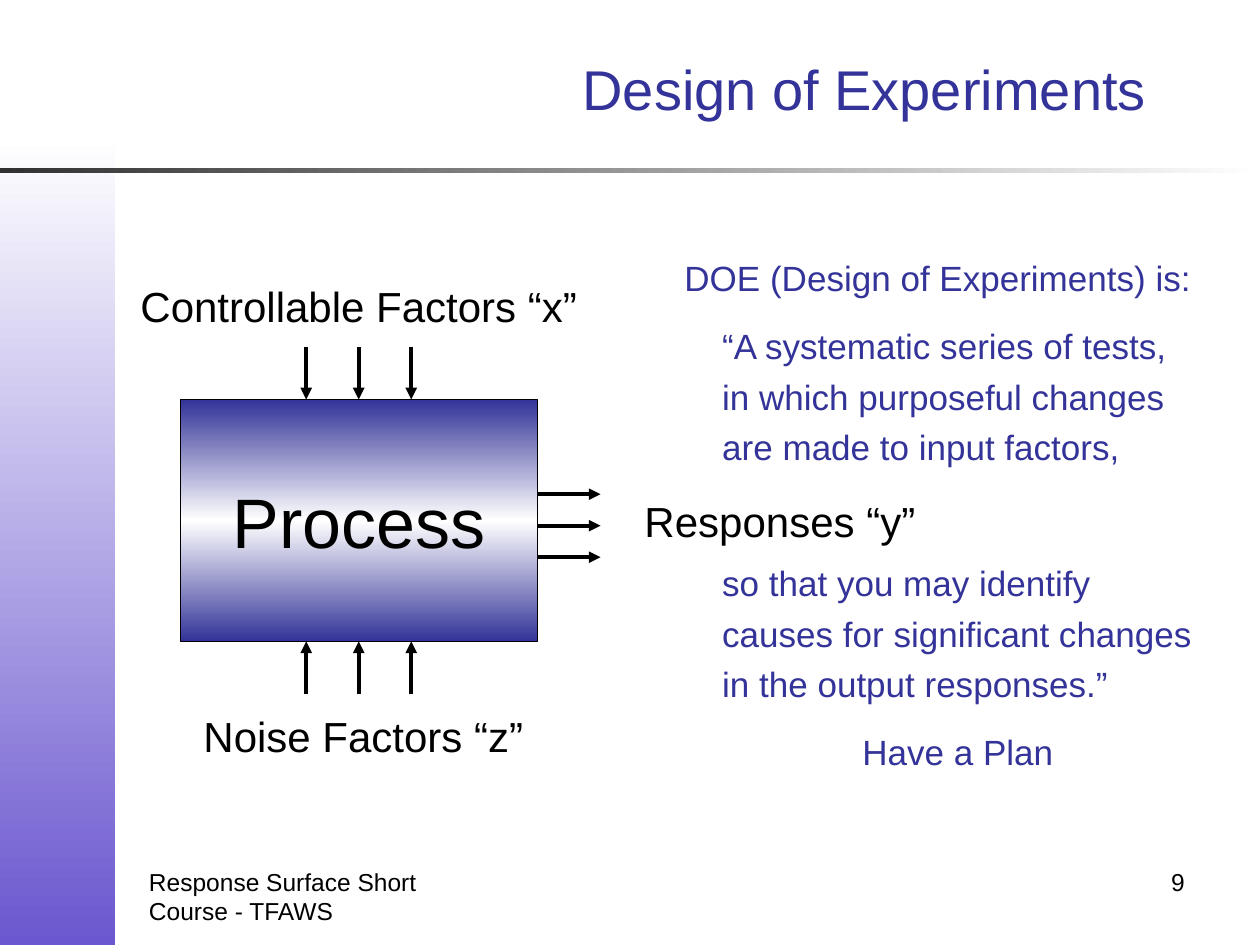
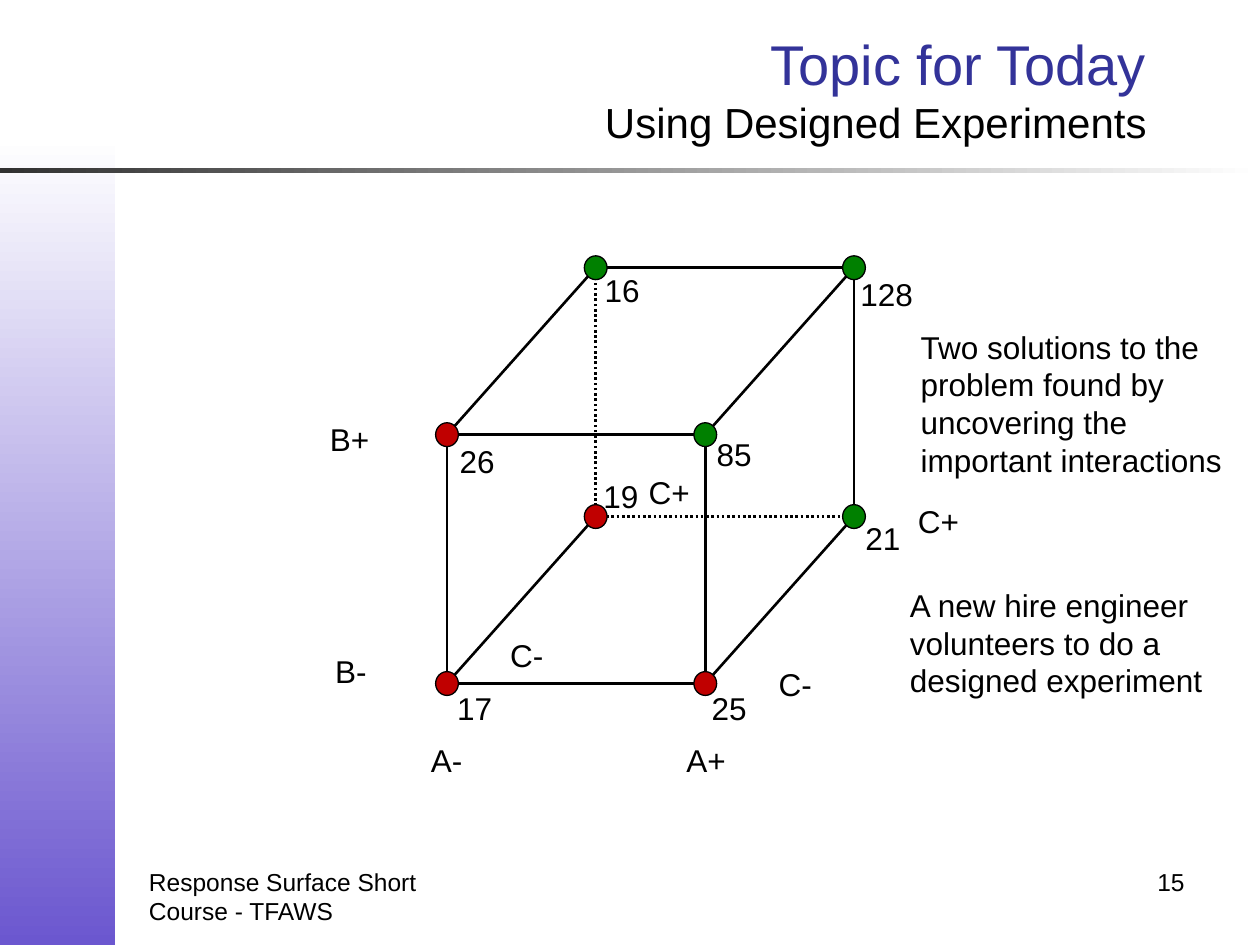
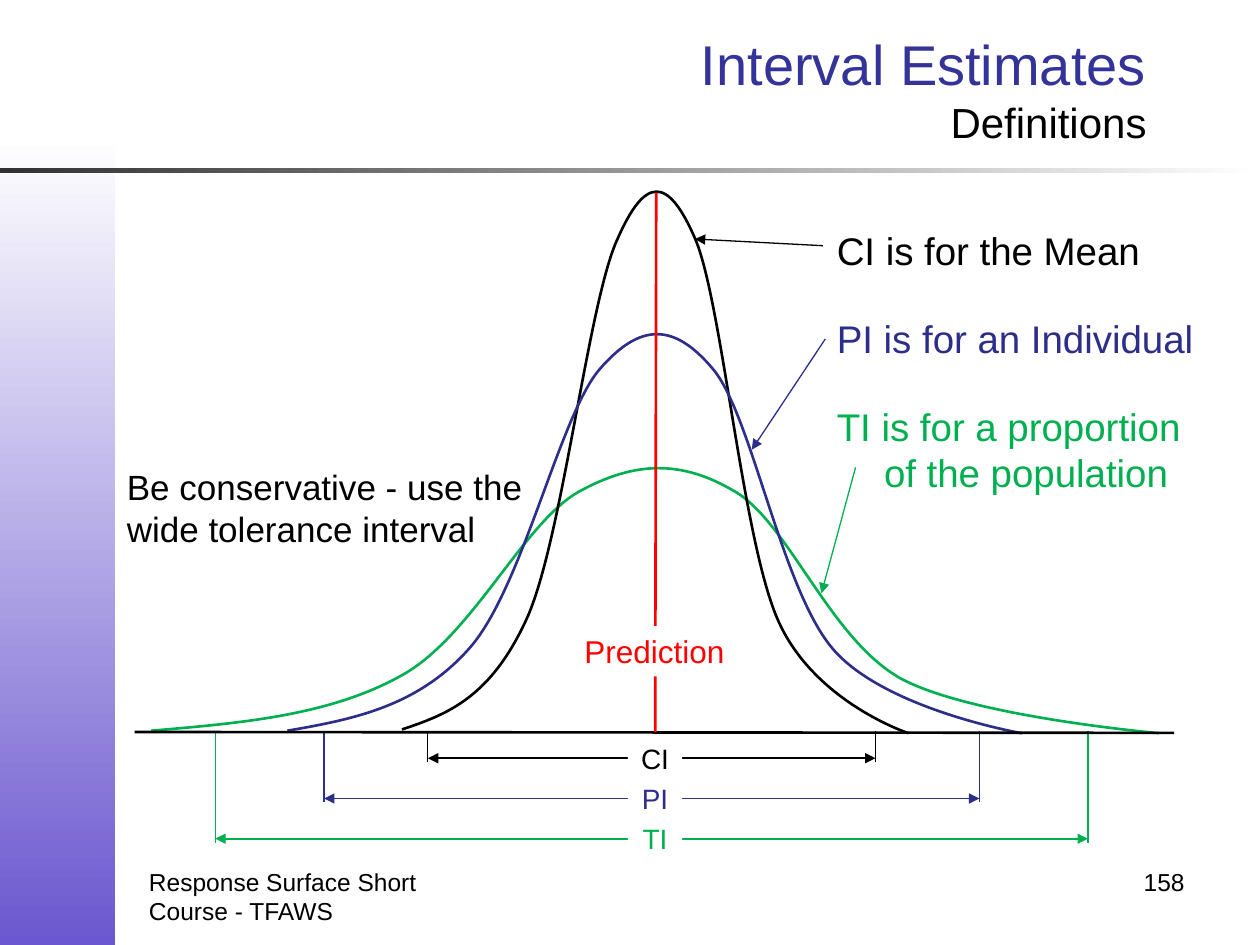
from copy import deepcopy
from itertools import combinations, product

from lxml import etree
from pptx import Presentation
from pptx.dml.color import RGBColor
from pptx.enum.dml import MSO_LINE
from pptx.enum.shapes import MSO_CONNECTOR, MSO_SHAPE
from pptx.enum.text import MSO_ANCHOR, MSO_AUTO_SIZE, PP_ALIGN
from pptx.oxml.ns import qn
from pptx.util import Pt

LEFT, CENTER, RIGHT, JUSTIFY = PP_ALIGN.LEFT, PP_ALIGN.CENTER, PP_ALIGN.RIGHT, PP_ALIGN.JUSTIFY
MIDDLE = MSO_ANCHOR.MIDDLE
NO_AUTOFIT = MSO_AUTO_SIZE.NONE
DOTTED = MSO_LINE.ROUND_DOT
STRAIGHT = MSO_CONNECTOR.STRAIGHT
RECT, OVAL = MSO_SHAPE.RECTANGLE, MSO_SHAPE.OVAL


class Theme:
    font = "Arial"
    white = RGBColor.from_string("FFFFFF")
    black = RGBColor.from_string("000000")
    charcoal = RGBColor.from_string("313131")
    indigo = RGBColor.from_string("333399")
    violet = RGBColor.from_string("6B57CF")
    navy = RGBColor.from_string("2D2D8A")
    green = RGBColor.from_string("00B050")
    red = RGBColor.from_string("FF0000")
    dot_green = RGBColor.from_string("008000")
    dot_red = RGBColor.from_string("C00000")
    process = 40
    title = 32
    heading = 24
    listing = 22
    body = 20
    label = 18
    interval = 16
    footer = 14


def add_text(slide, text, left, top, width, height, size, color=Theme.black,
             align=LEFT, wrap=False, fill=None):
    """Add a text box with one paragraph for each line of text."""
    sp = slide.shapes.add_textbox(Pt(left), Pt(top), Pt(width), Pt(height))
    if fill is not None:
        sp.fill.solid()
        sp.fill.fore_color.rgb = fill
    tf = sp.text_frame
    tf.word_wrap = wrap
    tf.text = text
    for p in tf.paragraphs:
        p.alignment = align
        p.font.name = Theme.font
        p.font.size = Pt(size)
        p.font.color.rgb = color
    return sp


def add_line(slide, start, end, color=Theme.black, width=1.5, arrows=(), dash=None):
    """Add a straight line; arrows lists headEnd (start) and tailEnd (end)."""
    line = slide.shapes.add_connector(STRAIGHT, *(Pt(v) for v in (*start, *end)))
    line.line.color.rgb = color
    line.line.width = Pt(width)
    if dash is not None:
        line.line.dash_style = dash
    props = line.element.spPr
    for arrow in arrows:
        etree.SubElement(props.find(qn("a:ln")), qn("a:" + arrow), type="triangle")
    etree.SubElement(props, qn("a:effectLst"))
    return line


prs = Presentation()
prs.slide_width, prs.slide_height = Pt(720), Pt(540)
layout = prs.slide_layouts[5]

# Titles and footers
slides = []
for number, title, subtitle in (
    (9, "Design of Experiments", None),
    (15, "Topic for Today", "Using Designed Experiments"),
    (158, "Interval Estimates", "Definitions"),
):
    s = prs.slides.add_slide(layout)
    slides.append(s)
    sp = s.shapes.title
    sp.left, sp.top, sp.width, sp.height = Pt(144), Pt(7.2), Pt(518.4), Pt(86.4)
    tf = sp.text_frame
    tf.auto_size = NO_AUTOFIT
    tf.vertical_anchor = MIDDLE
    p = tf.paragraphs[0]
    p.alignment = RIGHT
    p.font.name = Theme.font
    for text, size, color in ((title, Theme.title, Theme.indigo),
                              (subtitle, Theme.heading, Theme.black)):
        if text is None:
            continue
        if p.runs:
            p.add_line_break()
        r = p.add_run()
        r.text = text
        r.font.size = Pt(size)
        r.font.color.rgb = color
    add_text(s, "Response Surface Short Course - TFAWS", 78, 491.7, 168, 37.5,
             Theme.footer, wrap=True)
    add_text(s, str(number), 516, 491.7, 168, 37.5, Theme.footer, align=RIGHT, wrap=True)

doe, cube, intervals = slides

# Side band and title rule, shared through the layout
for shape_id, box, angle, colors in (
    (101, (0, 77.8, 65.9, 462.2), 270, (Theme.white, Theme.violet)),
    (102, (0, 96, 720, 2.9), 0, (Theme.charcoal, Theme.white)),
):
    sp = doe.shapes.add_shape(RECT, *(Pt(v) for v in box))
    sp.shadow.inherit = False
    sp.line.fill.background()
    sp.fill.gradient()
    sp.fill.gradient_angle = angle
    for stop, color in zip(sp.fill.gradient_stops, colors):
        stop.color.rgb = color
    sp.element.nvSpPr.cNvPr.id = shape_id
    layout.shapes.element.insert(shape_id - 99, sp.element)

# Design of Experiments: process diagram
left, top, width, height = 103, 228.3, 204, 138.2
process = doe.shapes.add_shape(RECT, Pt(left), Pt(top), Pt(width), Pt(height))
process.shadow.inherit = False
process.line.color.rgb = Theme.black
process.line.width = Pt(0.75)
process.fill.gradient()
process.fill.gradient_angle = 270
stops = process.element.find(".//" + qn("a:gsLst"))
middle_stop = deepcopy(stops[0])
middle_stop.set("pos", "50000")
stops.insert(1, middle_stop)
for stop, color in zip(process.fill.gradient_stops,
                       (Theme.indigo, Theme.white, Theme.indigo)):
    stop.color.rgb = color
tf = process.text_frame
tf.word_wrap = False
tf.vertical_anchor = MIDDLE
tf.text = "Process"
p = tf.paragraphs[0]
p.alignment = CENTER
p.font.name = Theme.font
p.font.size = Pt(Theme.process)
p.font.color.rgb = Theme.black

for step in (-1, 0, 1):
    x = left + width / 2 + 30 * step
    for outer, edge, site in ((198.5, top, 0), (396.6, top + height, 2)):
        arrow = add_line(doe, (x, outer), (x, edge), width=2.25, arrows=["tailEnd"])
        if step == 0:
            arrow.end_connect(process, site)
    y = 300.4 + 18 * step
    add_line(doe, (left + width, y), (343.2, y), width=2.25, arrows=["tailEnd"])

for text, x, y, w in (
    ("Noise Factors “z”", 109.2, 402.5, 197.3),
    ("Controllable Factors “x”", 73.2, 156.5, 264.2),
    ("Responses “y”", 361.2, 279.5, 169.2),
):
    add_text(doe, text, x, y, w, 36, Theme.heading)

definition = add_text(
    doe,
    "DOE (Design of Experiments) is:\n"
    "“A systematic series of tests, in which purposeful changes are made to input factors,\n"
    "so that you may identify causes for significant changes in the output responses.”\n"
    "Have a Plan",
    384, 138.4, 305.1, 303.1, Theme.body, Theme.indigo, wrap=True)
paragraphs = definition.text_frame.paragraphs
for p, align, gap in zip(paragraphs, (JUSTIFY, LEFT, LEFT, CENTER), (0, 10, 49, 10)):
    p.alignment = align
    p.line_spacing = 1.2
    p.space_before = Pt(gap)
    if p is not paragraphs[0]:
        p._p.get_or_add_pPr().set("marL", str(Pt(21.6)))

# Topic for Today: cube of factors A, B and C, each low (0) or high (1)
corners = {
    (a, b, c): (255.4 + 147.6 * a + 85 * c, 390.6 - 142.2 * b - 95.4 * c)
    for a, b, c in product((0, 1), repeat=3)
}
hidden = (0, 0, 1)
for one, two in combinations(corners, 2):
    if sum(m != n for m, n in zip(one, two)) == 1:
        along_c = one[2] != two[2]
        dotted = hidden in (one, two) and not along_c
        add_line(cube, corners[one], corners[two], dash=DOTTED if dotted else None)

for corner, value, color, x, y in (
    ((0, 0, 0), "17", Theme.dot_red, 254.2, 390.2),
    ((1, 0, 0), "25", Theme.dot_red, 399.6, 390.2),
    ((0, 1, 0), "26", Theme.dot_red, 255.6, 249.1),
    ((0, 0, 1), "19", Theme.dot_red, 337.7, 269.3),
    ((1, 1, 0), "85", Theme.dot_green, 402.5, 245.2),
    ((1, 0, 1), "21", Theme.dot_green, 487.4, 293),
    ((0, 1, 1), "16", Theme.dot_green, 338.4, 151.2),
    ((1, 1, 1), "128", Theme.dot_green, 484.6, 153.8),
):
    center_x, center_y = corners[corner]
    dot = cube.shapes.add_shape(OVAL, Pt(center_x - 6.5), Pt(center_y - 6.8),
                                Pt(13), Pt(13.6))
    dot.shadow.inherit = False
    dot.fill.solid()
    dot.fill.fore_color.rgb = color
    dot.line.color.rgb = Theme.black
    dot.line.width = Pt(0.75)
    add_text(cube, value, x, y, 14.6 + 10.05 * len(value), 28.8, Theme.label)

for text, x, y in (
    ("A-", 239.2, 419.8), ("A+", 385.2, 419.8),
    ("B-", 184.4, 368.8), ("B+", 181.4, 236.2),
    ("C-", 284.4, 360), ("C+", 363.6, 266.9),
    ("C-", 437.8, 376.6), ("C+", 517.5, 283.5),
):
    add_text(cube, text, x, y, 38.5 if "+" in text else 34, 28.8, Theme.label)

add_text(cube, "Two solutions to the problem found by uncovering the important interactions",
         519, 183.6, 191.5, 94.3, Theme.label, wrap=True)
add_text(cube, "A new hire engineer volunteers to do a designed experiment",
         512.9, 331.2, 184.3, 72.7, Theme.label, wrap=True)

# Interval Estimates: each curve is a start point followed by Bézier triplets
axis_y = 418.3
center = 374.3
for name, color, curve, (low, high), y, leader in (
    ("TI", Theme.green,
     [(86.4, 417.6), (137.5, 413.3), (188.6, 409), (229.7, 385.9),
      (270, 363.6), (299.5, 298.1), (331.2, 280.8),
      (362.9, 263.5), (389.5, 262.8), (419.8, 280.8),
      (450.7, 298.8), (473.8, 364.3), (514.1, 387.4),
      (554.4, 409.7), (662.4, 419), (662.4, 419)],
     (123, 621.7), 479.3, ((488.9, 267.1), (469.4, 339.1))),
    ("CI", Theme.black,
     [(229.7, 416.9), (255.6, 408.2), (280.8, 398.9), (301.7, 352.1),
      (321.8, 305.3), (336.2, 172.8), (352.8, 136.8),
      (368.6, 100.8), (381.6, 100.1), (397.4, 136.8),
      (412.6, 172.8), (424.1, 306.7), (444.2, 353.5),
      (464.4, 401), (519.1, 419), (519.1, 419)],
     (244.5, 500.3), 433.3, ((470.2, 140.4), (397.1, 136.6))),
    ("PI", Theme.navy,
     [(164.2, 417.6), (201.6, 411.1), (239, 403.9), (268.6, 370.1),
      (298.8, 335.5), (319.7, 237.6), (342.7, 211),
      (365.8, 184.3), (385.2, 184.3), (407.5, 211),
      (429.8, 237.6), (446.4, 336.2), (475.9, 370.8),
      (505.4, 405.4), (583.9, 419), (583.9, 419)],
     (185.2, 559.6), 456.3, ((471.6, 193.7), (429.6, 257))),
):
    points = [(Pt(x), Pt(y_point)) for x, y_point in curve]
    outline = intervals.shapes.build_freeform(*points[0])
    outline.add_line_segments(points[1:], close=False)
    sp = outline.convert_to_shape()
    sp.shadow.inherit = False
    sp.fill.background()
    sp.line.color.rgb = color
    sp.line.width = Pt(1.5)
    # Turn every three straight segments into one cubic segment
    contour = sp.element.find(".//" + qn("a:path"))
    segments = contour.findall(qn("a:lnTo"))
    for i in range(0, len(segments), 3):
        cubic = etree.SubElement(contour, qn("a:cubicBezTo"))
        for segment in segments[i:i + 3]:
            cubic.append(segment[0])
            contour.remove(segment)

    add_line(intervals, *leader, color, 0.75, ["tailEnd"])
    add_line(intervals, (low, y), (high, y), color, 1, ["headEnd", "tailEnd"])
    for x in (low, high):
        add_line(intervals, (x, 417.6), (x, y + 2.2), color, 0.75)
    sp = add_text(intervals, name, center - 15.5, y - 9.8, 31, 19.4, Theme.interval,
                  color, CENTER, fill=Theme.white)
    sp.text_frame.margin_top = sp.text_frame.margin_bottom = 0

add_line(intervals, (77, axis_y), (671, axis_y + 0.5))
add_line(intervals, (375, 110.2), (374.4, axis_y), Theme.red)
add_text(intervals, "Prediction", 326.5, 357.8, 95, 28.8, Theme.label, Theme.red,
         CENTER, fill=Theme.white)

meanings = add_text(
    intervals,
    "CI is for the Mean\n"
    "PI is for an Individual\n"
    "TI is for a proportion of the population",
    471.1, 126.1, 227.5, 180, Theme.listing, wrap=True)
for p, color, gap in zip(meanings.text_frame.paragraphs,
                         (Theme.black, Theme.navy, Theme.green), (0, 24, 24)):
    p.font.color.rgb = color
    p.space_before = Pt(gap)
    props = p._p.get_or_add_pPr()
    props.set("marL", str(Pt(27)))
    props.set("indent", str(-Pt(27)))

add_text(intervals, "Be conservative - use the wide tolerance interval",
         65.4, 262.5, 244, 55.4, Theme.body, wrap=True)

prs.save("out.pptx")
